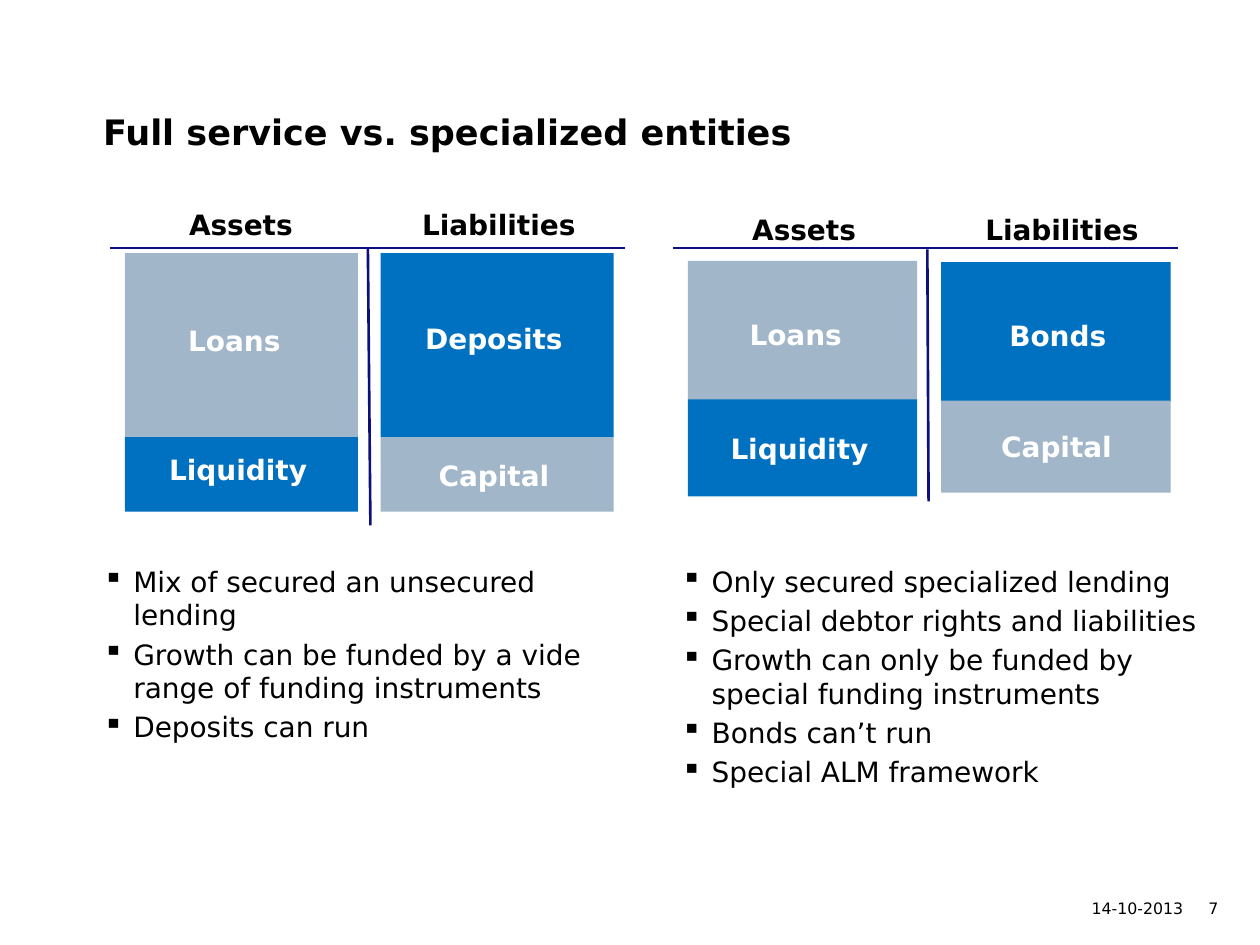
from lxml import etree
from pptx import Presentation
from pptx.dml.color import RGBColor
from pptx.enum.shapes import MSO_CONNECTOR, MSO_SHAPE
from pptx.enum.text import MSO_ANCHOR, PP_ALIGN
from pptx.oxml.ns import qn
from pptx.util import Inches, Pt

RECTANGLE = MSO_SHAPE.RECTANGLE
STRAIGHT = MSO_CONNECTOR.STRAIGHT
TOP, MIDDLE = MSO_ANCHOR.TOP, MSO_ANCHOR.MIDDLE
LEFT, CENTER, RIGHT = PP_ALIGN.LEFT, PP_ALIGN.CENTER, PP_ALIGN.RIGHT

COLUMNS, ROWS = 100, 75
CELL = Inches(0.1)
FONT = "DejaVu Sans"
COLORS = {
    "text": "000000",
    "label": "FFFFFF",
    "rule": "0D107C",
    "grey": "A1B6C8",
    "blue": "0070C0",
}

FULL_SERVICE = {
    "header": (10.2, 16, 38.1, 3.7),
    "rule": (8.7, 19.7, 49.6, 19.7),
    "divider": (29.2, 19.7, 29.4, 41.7),
    "block_width": 18.5,
    "label_size": (15.2, 3.7),
    "blocks": [
        ("Loans", "grey", (9.9, 20.1), 14.6, (11, 25.2)),
        ("Deposits", "blue", (30.2, 20.1), 14.6, (31.6, 25)),
        ("Capital", "grey", (30.2, 34.7), 5.9, (31.6, 35.9)),
        ("Liquidity", "blue", (9.9, 34.7), 5.9, (11.3, 35.4)),
    ],
}
SPECIALIZED = {
    "header": (54.9, 16.4, 37.3, 3.4),
    "rule": (53.4, 19.7, 93.5, 19.7),
    "divider": (73.6, 19.8, 73.7, 39.8),
    "block_width": 18.2,
    "label_size": (14.9, 3.4),
    "blocks": [
        ("Loans", "grey", (54.6, 20.7), 11.1, (55.7, 24.7)),
        ("Bonds", "blue", (74.7, 20.8), 11.1, (76.5, 24.8)),
        ("Capital", "grey", (74.7, 31.8), 7.3, (76.4, 33.6)),
        ("Liquidity", "blue", (54.6, 31.7), 7.7, (56, 33.8)),
    ],
}
FULL_SERVICE_POINTS = [
    "Mix of secured an unsecured lending",
    "Growth can be funded by a vide range of funding instruments",
    "Deposits can run",
]
SPECIALIZED_POINTS = [
    "Only secured specialized lending",
    "Special debtor rights and liabilities",
    "Growth can only be funded by special funding instruments",
    "Bonds can’t run",
    "Special ALM framework",
]


def grid(*cells):
    return [round(cell * CELL) for cell in cells]


def color(name):
    return RGBColor.from_string(COLORS[name])


def add_box(page, area, anchor=TOP):
    frame = page.shapes.add_textbox(*grid(*area)).text_frame
    frame.word_wrap = True
    frame.vertical_anchor = anchor
    return frame


def add_span(para, text, size, ink="text", bold=False):
    span = para.add_run()
    span.text = text
    span.font.name = FONT
    span.font.size = Pt(size)
    span.font.bold = bold
    span.font.color.rgb = color(ink)


def add_text(page, area, text, size, align=LEFT, anchor=TOP, ink="text", bold=False):
    frame = add_box(page, area, anchor)
    para = frame.paragraphs[0]
    para.alignment = align
    add_span(para, text, size, ink, bold)
    return frame


def add_bullets(page, area, points):
    frame = add_box(page, area)
    for index, point in enumerate(points):
        para = frame.add_paragraph() if index else frame.paragraphs[0]
        properties = para._p.get_or_add_pPr()
        properties.set("marL", str(Inches(0.24)))
        properties.set("indent", str(-Inches(0.24)))
        etree.SubElement(properties, qn("a:buChar"), char="▪")
        if index:
            para.space_before = Pt(3.2)
        add_span(para, point, 16)


def add_rule(page, ends, weight):
    rule = page.shapes.add_connector(STRAIGHT, *grid(*ends))
    rule.line.color.rgb = color("rule")
    rule.line.width = Pt(weight)
    etree.SubElement(rule._element.spPr, qn("a:effectLst"))


def add_block(page, area, fill):
    block = page.shapes.add_shape(RECTANGLE, *grid(*area))
    block.shadow.inherit = False
    block.fill.solid()
    block.fill.fore_color.rgb = color(fill)
    block.line.fill.background()


def add_header(page, area):
    frame = add_box(page, area)
    frame.margin_left = Inches(0.48)
    para = frame.paragraphs[0]
    tabs = etree.SubElement(para._p.get_or_add_pPr(), qn("a:tabLst"))
    etree.SubElement(tabs, qn("a:tab"), pos=str(Inches(1.85)), algn="l")
    add_span(para, "Assets\tLiabilities", 16, bold=True)


def add_balance_sheet(page, sheet):
    add_header(page, sheet["header"])
    add_rule(page, sheet["rule"], 1.25)
    add_rule(page, sheet["divider"], 1.5)
    for label, fill, corner, height, label_corner in sheet["blocks"]:
        add_block(page, (*corner, sheet["block_width"], height), fill)
        add_text(page, (*label_corner, *sheet["label_size"]), label, 16,
                 CENTER, ink="label", bold=True)


def add_footer(page, area, text):
    frame = add_text(page, area, text, 9, RIGHT, MIDDLE)
    frame.margin_left = frame.margin_right = 0
    frame.margin_top = frame.margin_bottom = 0


def main():
    deck = Presentation()
    deck.slide_width, deck.slide_height = grid(COLUMNS, ROWS)
    page = deck.slides.add_slide(deck.slide_layouts[6])
    add_text(page, (7.2, 7, 88.3, 6.9), "Full service vs. specialized entities", 20,
             anchor=MIDDLE, bold=True)
    add_bullets(page, (7.2, 44.3, 43.3, 24.6), FULL_SERVICE_POINTS)
    add_bullets(page, (53.1, 44.3, 43.3, 24.6), SPECIALIZED_POINTS)
    add_footer(page, (85.2, 70.9, 8.7, 2.4), "14-10-2013")
    add_footer(page, (94.2, 70.9, 2.5, 2.4), "7")
    for sheet in (SPECIALIZED, FULL_SERVICE):
        add_balance_sheet(page, sheet)
    deck.save("out.pptx")


if __name__ == "__main__":
    main()
